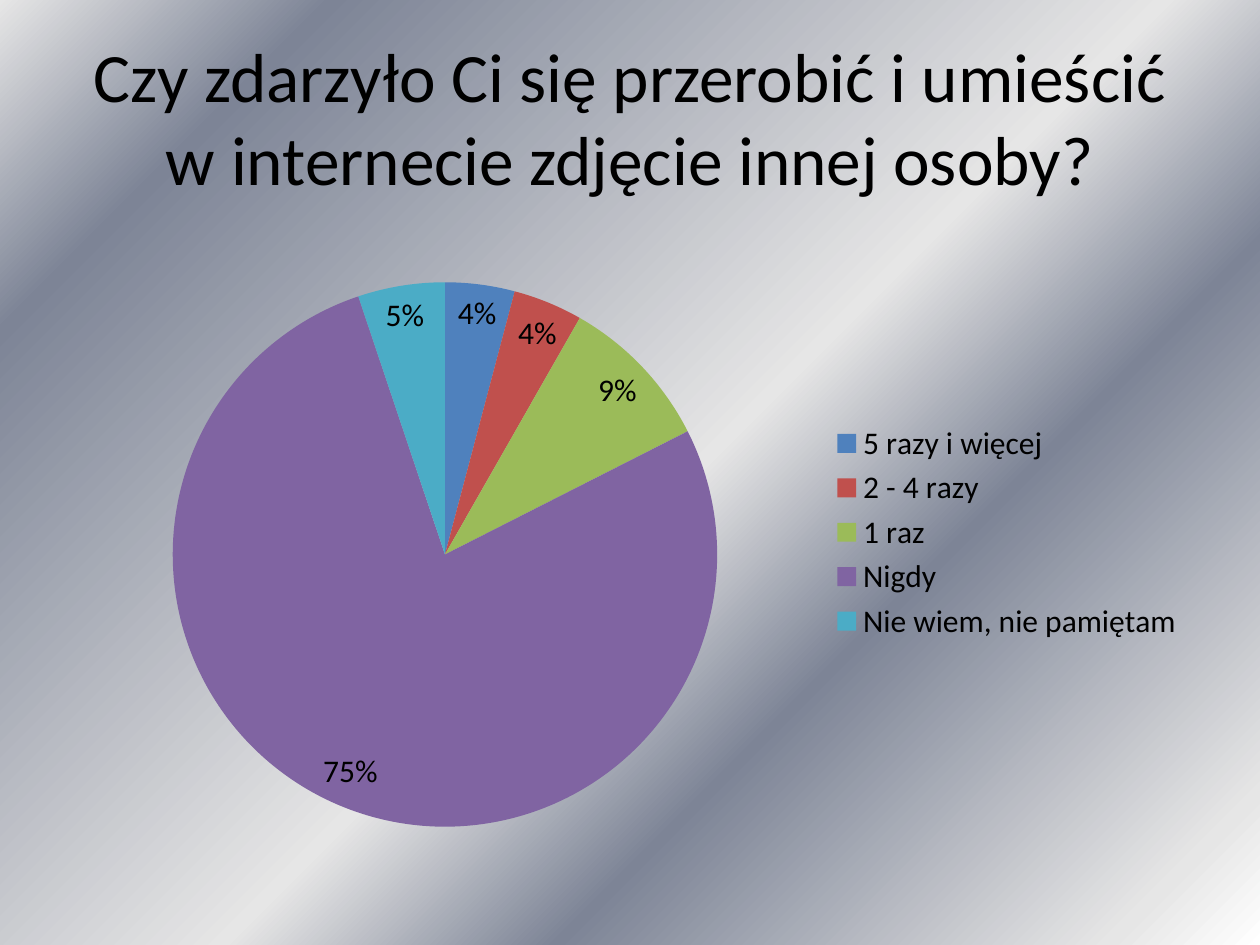
from copy import deepcopy
from dataclasses import dataclass

from pptx import Presentation
from pptx.chart.data import CategoryChartData
from pptx.dml.color import RGBColor
from pptx.enum.chart import XL_CHART_TYPE, XL_LABEL_POSITION, XL_LEGEND_POSITION
from pptx.enum.text import MSO_ANCHOR, PP_ALIGN
from pptx.oxml.ns import qn
from pptx.util import Inches, Pt

TITLE = "Czy zdarzyło Ci się przerobić i umieścić w internecie zdjęcie innej osoby?"
ANSWERS = [
    ("5 razy i więcej", 0.04, "4F81BD"),
    ("2 - 4 razy", 0.04, "C0504D"),
    ("1 raz", 0.09, "9BBB59"),
    ("Nigdy", 0.75, "8064A2"),
    ("Nie wiem, nie pamiętam", 0.05, "4BACC6"),
]


@dataclass(frozen=True)
class Theme:
    font: str = "Calibri"
    ink: str = "000000"
    title_size: float = 39.6
    chart_size: float = 18
    gradient: tuple = (
        (0, "FFFFFF"), (0.07, "E6E6E6"), (0.32, "7D8496"),
        (0.47, "E6E6E6"), (0.85, "7D8496"), (1, "E6E6E6"),
    )
    gradient_angle: float = 135


THEME = Theme()
WIDTH, HEIGHT = Inches(10), Inches(7.5)
MARGIN = int(WIDTH * 0.05)
CONTENT_WIDTH = WIDTH - 2 * MARGIN
TITLE_TOP, TITLE_HEIGHT = int(HEIGHT * 0.04), Inches(1.25)
CHART_TOP, CHART_HEIGHT = Inches(1.75), int(HEIGHT * 0.66)


def style_font(font, size):
    font.name = THEME.font
    font.size = Pt(size)
    font.color.rgb = RGBColor.from_string(THEME.ink)


def write_text(frame, text, *, size, align, anchor):
    frame.word_wrap = True
    frame.vertical_anchor = anchor
    para = frame.paragraphs[0]
    para.alignment = align
    span = para.add_run()
    span.text = text
    style_font(span.font, size)


def paint_background(page):
    fill = page.background.fill
    fill.gradient()
    fill.gradient_angle = THEME.gradient_angle
    stop_list = next(page.element.iter(qn("a:gsLst")))
    for _ in range(len(THEME.gradient) - len(stop_list)):
        stop_list.append(deepcopy(stop_list[0]))
    for stop, (position, color) in zip(fill.gradient_stops, THEME.gradient):
        stop.position = position
        stop.color.rgb = RGBColor.from_string(color)


def add_title(page):
    title = page.shapes.title
    title.left, title.top = MARGIN, TITLE_TOP
    title.width, title.height = CONTENT_WIDTH, TITLE_HEIGHT
    write_text(title.text_frame, TITLE, size=THEME.title_size,
               align=PP_ALIGN.CENTER, anchor=MSO_ANCHOR.MIDDLE)


def add_answer_pie(page):
    answers = CategoryChartData(number_format="0%")
    answers.categories = [name for name, _, _ in ANSWERS]
    answers.add_series("Series 1", [share for _, share, _ in ANSWERS])
    chart = page.shapes.add_chart(XL_CHART_TYPE.PIE, MARGIN, CHART_TOP,
                                  CONTENT_WIDTH, CHART_HEIGHT, answers).chart
    style_font(chart.font, THEME.chart_size)
    chart.has_title = False
    chart.has_legend = True
    chart.legend.position = XL_LEGEND_POSITION.RIGHT
    chart.legend.include_in_layout = False

    plot = chart.plots[0]
    plot.vary_by_categories = True
    plot.has_data_labels = True
    labels = plot.data_labels
    labels.show_value = True
    labels.show_percentage = False
    labels.number_format = "0%"
    labels.number_format_is_linked = False
    labels.position = XL_LABEL_POSITION.BEST_FIT
    for index, (_, _, color) in enumerate(ANSWERS):
        fill = plot.series[0].points[index].format.fill
        fill.solid()
        fill.fore_color.rgb = RGBColor.from_string(color)


def main():
    deck = Presentation()
    deck.slide_width, deck.slide_height = WIDTH, HEIGHT
    page = deck.slides.add_slide(deck.slide_layouts[5])
    paint_background(page)
    add_title(page)
    add_answer_pie(page)
    deck.save("out.pptx")


if __name__ == "__main__":
    main()
